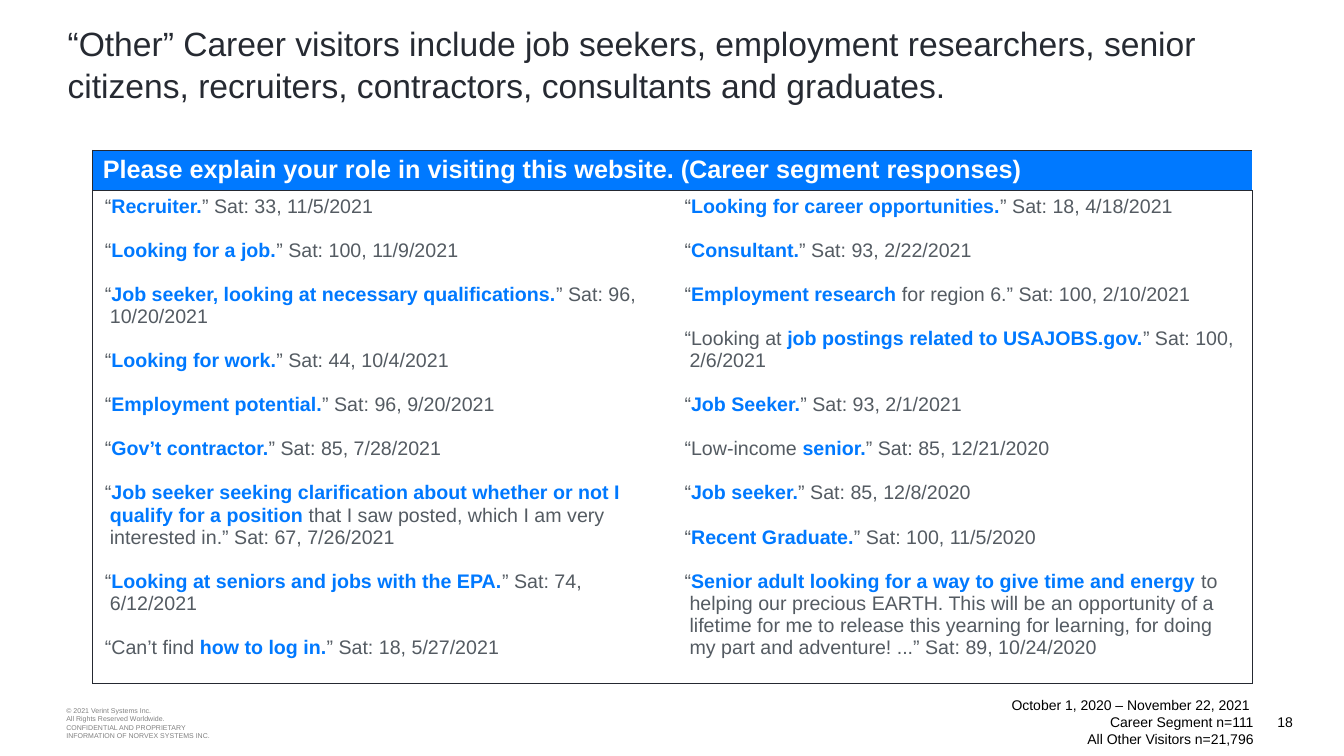
"""Build the slide of quoted roles given by "Other" career visitors."""
import pptx
import pptx.dml.color
import pptx.enum.text
import pptx.oxml
import pptx.util

Pt = pptx.util.Pt
Inches = pptx.util.Inches
Align = pptx.enum.text.PP_ALIGN
Anchor = pptx.enum.text.MSO_ANCHOR

theme = {
    "font": "Arial",
    "title": ("262A32", 24),
    "head": ("FFFFFF", 18),
    "quote": ("545B62", 14),
    "key": ("0079FF", 14),
    "note": ("000000", 10),
    "legal": ("808080", 5),
    "band": "0079FF",
    "edge": "252931",
}

heading = ("“Other” Career visitors include job seekers, employment researchers, senior "
           "citizens, recruiters, contractors, consultants and graduates.")
question = "Please explain your role in visiting this website. (Career segment responses)"

quotes = [
    [
        "“*Recruiter.*” Sat: 33, 11/5/2021",
        "“*Looking for a job.*” Sat: 100, 11/9/2021",
        "“*Job seeker, looking at necessary qualifications.*” Sat: 96, 10/20/2021",
        "“*Looking for work.*” Sat: 44, 10/4/2021",
        "“*Employment potential.*” Sat: 96, 9/20/2021",
        "“*Gov’t contractor.*” Sat: 85, 7/28/2021",
        "“*Job seeker seeking clarification about whether or not I qualify for a position *"
        "that I saw posted, which I am very interested in.” Sat: 67, 7/26/2021",
        "“*Looking at seniors and jobs with the EPA.*” Sat: 74, 6/12/2021",
        "“Can’t find *how to log in.*” Sat: 18, 5/27/2021",
    ],
    [
        "“*Looking for career opportunities.*” Sat: 18, 4/18/2021",
        "“*Consultant.*” Sat: 93, 2/22/2021",
        "“*Employment research* for region 6.” Sat: 100, 2/10/2021",
        "“Looking at *job postings related to USAJOBS.gov.*” Sat: 100, 2/6/2021",
        "“*Job Seeker.*” Sat: 93, 2/1/2021",
        "“Low-income *senior.*” Sat: 85, 12/21/2020",
        "“*Job seeker.*” Sat: 85, 12/8/2020",
        "“*Recent Graduate.*” Sat: 100, 11/5/2020",
        "“*Senior adult looking for a way to give time and energy* to helping our precious "
        "EARTH. This will be an opportunity of a lifetime for me to release this yearning for "
        "learning, for doing my part and adventure! ...” Sat: 89, 10/24/2020",
    ],
]

legal = ["© 2021 Verint Systems Inc.", "All Rights Reserved Worldwide.",
         "CONFIDENTIAL AND PROPRIETARY", "INFORMATION OF NORVEX SYSTEMS INC."]
scope = ["October 1, 2020 – November 22, 2021 ", "Career Segment n=111",
         "All Other Visitors n=21,796"]

deck = pptx.Presentation()
deck.slide_width, deck.slide_height = Inches(13.33), Inches(7.5)
slide = deck.slides.add_slide(deck.slide_layouts[5])


def area(*shares):
    """Turn left, top, width and height in percent of the slide into lengths."""
    sides = (deck.slide_width, deck.slide_height) * 2
    return [int(side * share / 100) for side, share in zip(sides, shares)]


def write(par, text, style, bold=False):
    """Add one run in a style of the theme."""
    tint, size = theme[style]
    run = par.add_run()
    run.text = text
    run.font.name = theme["font"]
    run.font.size = Pt(size)
    run.font.bold = bold
    run.font.color.rgb = pptx.dml.color.RGBColor.from_string(tint)


title = slide.shapes.title
title.left, title.top, title.width, title.height = area(4.28, 2.13, 91.52, 10.27)
title.text_frame.vertical_anchor = Anchor.TOP
title.text_frame.auto_size = pptx.enum.text.MSO_AUTO_SIZE.NONE
par = title.text_frame.paragraphs[0]
par.alignment = Align.LEFT
par.line_spacing = 1.04
write(par, heading, "title")

for place, lines, style, align in [
    (area(4.2, 92.53, 18, 6.27), legal, "legal", Align.LEFT),
    (area(88.6, 92.4, 8.33, 6.27), ["18"], "note", Align.RIGHT),
    (area(49, 92.4, 45, 6.27), scope, "note", Align.RIGHT),
]:
    frame = slide.shapes.add_textbox(*place).text_frame
    frame.word_wrap = True
    frame.vertical_anchor = Anchor.MIDDLE
    for row, line in enumerate(lines):
        par = frame.add_paragraph() if row else frame.paragraphs[0]
        par.alignment = align
        write(par, line, style)

table = slide.shapes.add_table(2, 2, *area(6.9, 19.87, 86.27, 69.33)).table
table.first_row = table.horz_banding = False
for row, share in zip(table.rows, (5.2, 64.13)):
    row.height = int(deck.slide_height * share / 100)

for row in range(2):
    for col in range(2):
        cell = table.cell(row, col)
        inner = "R" if col == 0 else "L"
        for side in "LRTB":
            paint = ("<a:noFill/>" if side == inner else
                     f'<a:solidFill><a:srgbClr val="{theme["edge"]}"/></a:solidFill>')
            cell._tc.get_or_add_tcPr().append(pptx.oxml.parse_xml(
                f'<a:ln{side} xmlns:a="http://schemas.openxmlformats.org/drawingml/2006/main"'
                f' w="{Pt(0.75)}">{paint}</a:ln{side}>'))
        if row == 0:
            cell.fill.solid()
            cell.fill.fore_color.rgb = pptx.dml.color.RGBColor.from_string(theme["band"])
        else:
            cell.fill.background()

table.cell(0, 0).merge(table.cell(0, 1))
write(table.cell(0, 0).text_frame.paragraphs[0], question, "head", True)

for col, group in enumerate(quotes):
    frame = table.cell(1, col).text_frame
    for row, quote in enumerate(group):
        par = frame.add_paragraph() if row else frame.paragraphs[0]
        par.space_before = Pt(15.75 if row else 0)
        props = par._p.get_or_add_pPr()
        props.set("marL", str(Inches(0.07)))
        props.set("indent", str(Inches(-0.05)))
        for part, text in enumerate(quote.split("*")):
            key = part % 2 == 1
            write(par, text, "key" if key else "quote", key)

deck.save("out.pptx")
